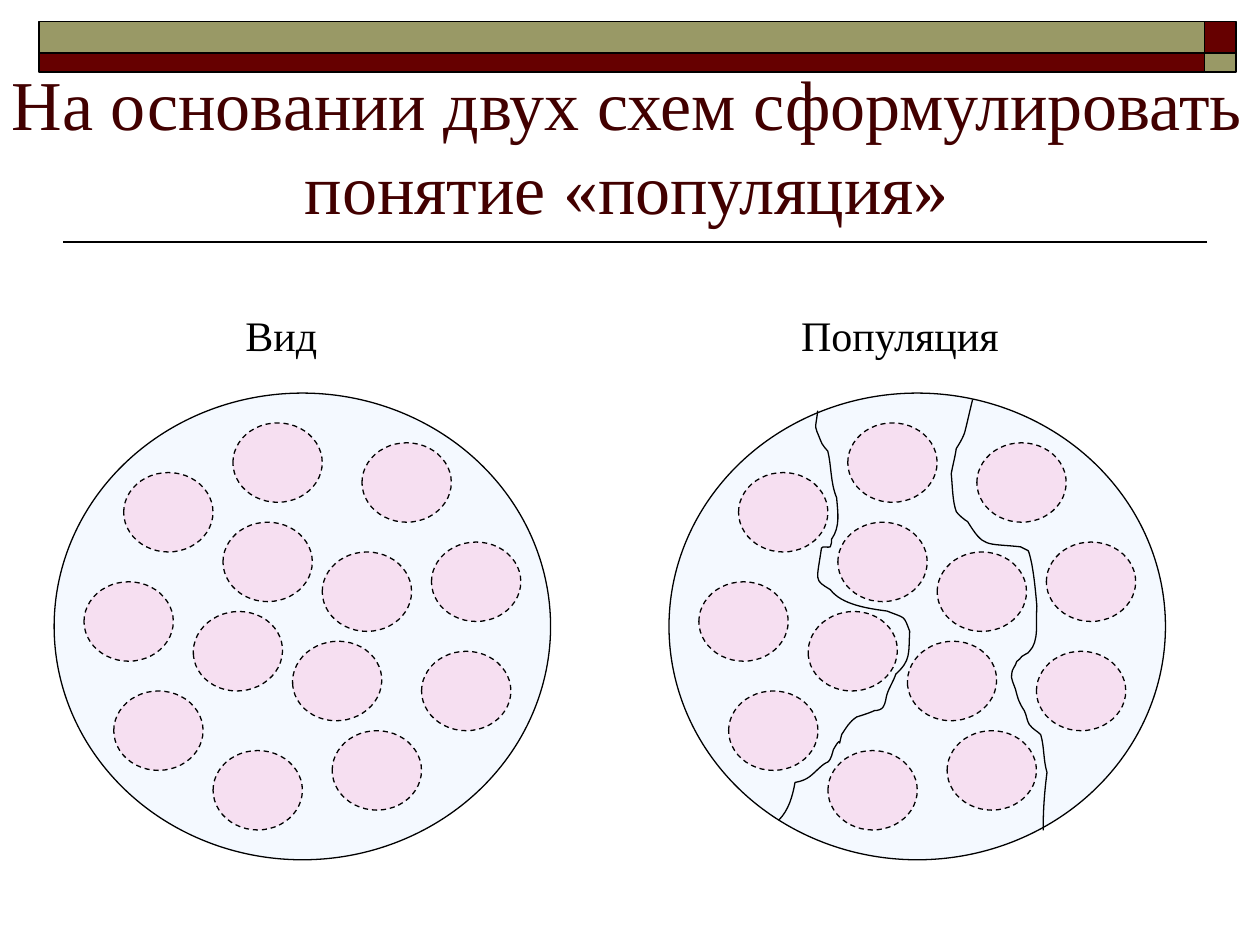
import pptx
import pptx.util
import pptx.dml.color
import pptx.enum.dml
import pptx.enum.shapes
import pptx.enum.text
import pptx.oxml.ns
from lxml import etree

Inches, Pt = pptx.util.Inches, pptx.util.Pt
RGBColor = pptx.dml.color.RGBColor
MSO_SHAPE = pptx.enum.shapes.MSO_SHAPE
PP_ALIGN = pptx.enum.text.PP_ALIGN
MSO_ANCHOR = pptx.enum.text.MSO_ANCHOR
qn = pptx.oxml.ns.qn

OLIVE = RGBColor(0x99, 0x99, 0x66)
MAROON = RGBColor(0x66, 0x00, 0x00)
TITLE_COLOR = RGBColor(0x42, 0x00, 0x00)
BLACK = RGBColor(0, 0, 0)
BLUE = RGBColor(0x99, 0xCC, 0xFF)
PINK = RGBColor(0xFF, 0x99, 0xCC)
FONT = "Times New Roman"

# Content
TITLE = "На основании двух схем сформулировать понятие «популяция»"
LABELS = [("Вид", 1.85, 2.44), ("Популяция", 6.26, 2.99)]

# Header band: column and row edges, colours by row
BAND_COLUMNS = [(0.31, 9.25), (9.56, 0.25)]
BAND_ROWS = [(0.17, 0.25), (0.42, 0.15)]
BAND_COLORS = [[OLIVE, MAROON], [MAROON, OLIVE]]

# Diagrams: a species is 50 x 47 grid units, a group is 9 x 8
UNIT = 3.94 / 50
SPECIES_SIZE, GROUP_SIZE = (50, 47), (9, 8)
SPECIES_TOP = 3.12
SPECIES_LEFTS = [5.31, 0.43]
GROUPS = [  # column, row, rotation
    (27, 16, 0), (37, 26, 0), (38, 15, 0), (17, 13, 0), (7, 8, 0),
    (18, 3, 0), (31, 5, 0), (28, 34, 0), (16, 36, 0), (3, 19, 0),
    (6, 30, 0), (14, 22, -5.6), (24, 25, -5.6),
]

# Borders between populations: start, then two controls and an end per row
BORDERS = [
    [(6.49, 3.26),
     (6.47, 3.43), (6.46, 3.36), (6.51, 3.49),
     (6.52, 3.53), (6.57, 3.58), (6.57, 3.58),
     (6.6, 3.7), (6.59, 3.83), (6.64, 3.95),
     (6.65, 4.07), (6.67, 4.18), (6.6, 4.28),
     (6.6, 4.3), (6.6, 4.32), (6.59, 4.34),
     (6.57, 4.35), (6.53, 4.33), (6.52, 4.35),
     (6.48, 4.62), (6.46, 4.6), (6.59, 4.68),
     (6.68, 4.8), (6.89, 4.83), (7.04, 4.85),
     (7.19, 4.91), (7.17, 4.88), (7.22, 5.01),
     (7.21, 5.19), (7.23, 5.24), (7.11, 5.35),
     (7.09, 5.41), (7.06, 5.45), (7.04, 5.51),
     (7.03, 5.54), (7.03, 5.58), (7.01, 5.61),
     (7, 5.63), (6.97, 5.64), (6.94, 5.64),
     (6.9, 5.66), (6.8, 5.69), (6.8, 5.69),
     (6.74, 5.73), (6.72, 5.77), (6.68, 5.83),
     (6.64, 5.99), (6.7, 5.8), (6.62, 5.94),
     (6.61, 5.95), (6.61, 5.98), (6.6, 6),
     (6.57, 6.07), (6.58, 6.03), (6.52, 6.08),
     (6.44, 6.15), (6.42, 6.19), (6.31, 6.21),
     (6.29, 6.32), (6.26, 6.43), (6.18, 6.51)],
    [(7.72, 3.17),
     (7.7, 3.25), (7.68, 3.34), (7.66, 3.42),
     (7.65, 3.47), (7.59, 3.56), (7.59, 3.56),
     (7.58, 3.63), (7.56, 3.7), (7.55, 3.76),
     (7.56, 3.86), (7.56, 3.98), (7.59, 4.06),
     (7.6, 4.08), (7.66, 4.13), (7.68, 4.14),
     (7.81, 4.35), (7.82, 4.31), (8.1, 4.34),
     (8.12, 4.35), (8.14, 4.36), (8.16, 4.37),
     (8.17, 4.38), (8.19, 4.48), (8.19, 4.48),
     (8.21, 4.59), (8.22, 4.7), (8.23, 4.81),
     (8.22, 4.94), (8.25, 5.09), (8.17, 5.17),
     (8.16, 5.19), (8.13, 5.19), (8.11, 5.21),
     (8.1, 5.22), (8.09, 5.24), (8.07, 5.25),
     (8.06, 5.29), (8.03, 5.31), (8.03, 5.35),
     (8.02, 5.38), (8.05, 5.44), (8.06, 5.47),
     (8.08, 5.55), (8.09, 5.58), (8.13, 5.64),
     (8.15, 5.68), (8.15, 5.72), (8.17, 5.75),
     (8.2, 5.79), (8.23, 5.8), (8.26, 5.83),
     (8.29, 5.93), (8.28, 6.03), (8.31, 6.13),
     (8.29, 6.29), (8.28, 6.42), (8.28, 6.59)],
]


def set_line(shape, width, dash=None):
    for name, value in {"width": Pt(width), "dash_style": dash}.items():
        setattr(shape.line, name, value)
    shape.line.color.rgb = BLACK


def add_filled(slide, preset, box, color, width, alpha=None, dash=None):
    shape = slide.shapes.add_shape(preset, *map(Inches, box))
    shape.shadow.inherit = False
    shape.fill.solid()
    shape.fill.fore_color.rgb = color
    if alpha is not None:
        color_element = shape._element.spPr.find(qn("a:solidFill"))[0]
        etree.SubElement(color_element, qn("a:alpha"), val=str(alpha * 1000))
    set_line(shape, width, dash)
    return shape


def add_text(slide, text, box, size, color, anchor, **paragraph_format):
    frame = slide.shapes.add_textbox(*map(Inches, box)).text_frame
    frame.word_wrap = True
    frame.vertical_anchor = anchor
    paragraph = frame.paragraphs[0]
    paragraph.text = text
    for name, value in paragraph_format.items():
        setattr(paragraph, name, value)
    font = paragraph.runs[0].font
    for name, value in {"name": FONT, "size": Pt(size)}.items():
        setattr(font, name, value)
    font.color.rgb = color


def add_border(slide, points):
    start, *rest = [tuple(map(Inches, point)) for point in points]
    builder = slide.shapes.build_freeform(*start)
    builder.add_line_segments(rest, close=False)
    border = builder.convert_to_shape()
    border.shadow.inherit = False
    border.fill.background()
    set_line(border, 0.75)
    # Join every three line segments into one cubic curve
    outline = border._element.find(".//" + qn("a:path"))
    segments = outline.findall(qn("a:lnTo"))
    for first in range(0, len(segments), 3):
        curve = etree.SubElement(outline, qn("a:cubicBezTo"))
        for segment in segments[first:first + 3]:
            curve.append(segment[0])
            outline.remove(segment)


def add_diagram(slide, left):
    width, height = (units * UNIT for units in SPECIES_SIZE)
    add_filled(slide, MSO_SHAPE.OVAL, (left, SPECIES_TOP, width, height), BLUE, 0.75, 10)
    width, height = (units * UNIT for units in GROUP_SIZE)
    for column, row, rotation in GROUPS:
        box = (left + column * UNIT, SPECIES_TOP + row * UNIT, width, height)
        group = add_filled(slide, MSO_SHAPE.OVAL, box, PINK, 0.75, 27,
                           pptx.enum.dml.MSO_LINE.DASH)
        group.rotation = rotation


def main():
    presentation = pptx.Presentation()
    presentation.slide_width, presentation.slide_height = Inches(10), Inches(7.5)
    slide = presentation.slides.add_slide(presentation.slide_layouts[6])

    # Rule under the title and header band
    rule = slide.shapes.add_connector(pptx.enum.shapes.MSO_CONNECTOR.STRAIGHT,
                                      *map(Inches, (9.58, 1.92, 0.5, 1.92)))
    set_line(rule, 1)
    etree.SubElement(rule._element.spPr, qn("a:effectLst"))
    for (top, height), colors in zip(BAND_ROWS, BAND_COLORS):
        for (left, width), color in zip(BAND_COLUMNS, colors):
            add_filled(slide, MSO_SHAPE.RECTANGLE, (left, top, width, height), color, 1)

    # Title
    add_text(slide, TITLE, (-0.05, 0.84, 10.05, 1.02), 40, TITLE_COLOR, MSO_ANCHOR.BOTTOM,
             alignment=PP_ALIGN.CENTER, line_spacing=Pt(48))

    # Diagrams, borders and labels
    for left in SPECIES_LEFTS:
        add_diagram(slide, left)
    for points in BORDERS:
        add_border(slide, points)
    for text, left, width in LABELS:
        add_text(slide, text, (left, 2.41, width, 0.5), 24, BLACK, MSO_ANCHOR.TOP)

    presentation.save("out.pptx")


if __name__ == "__main__":
    main()
